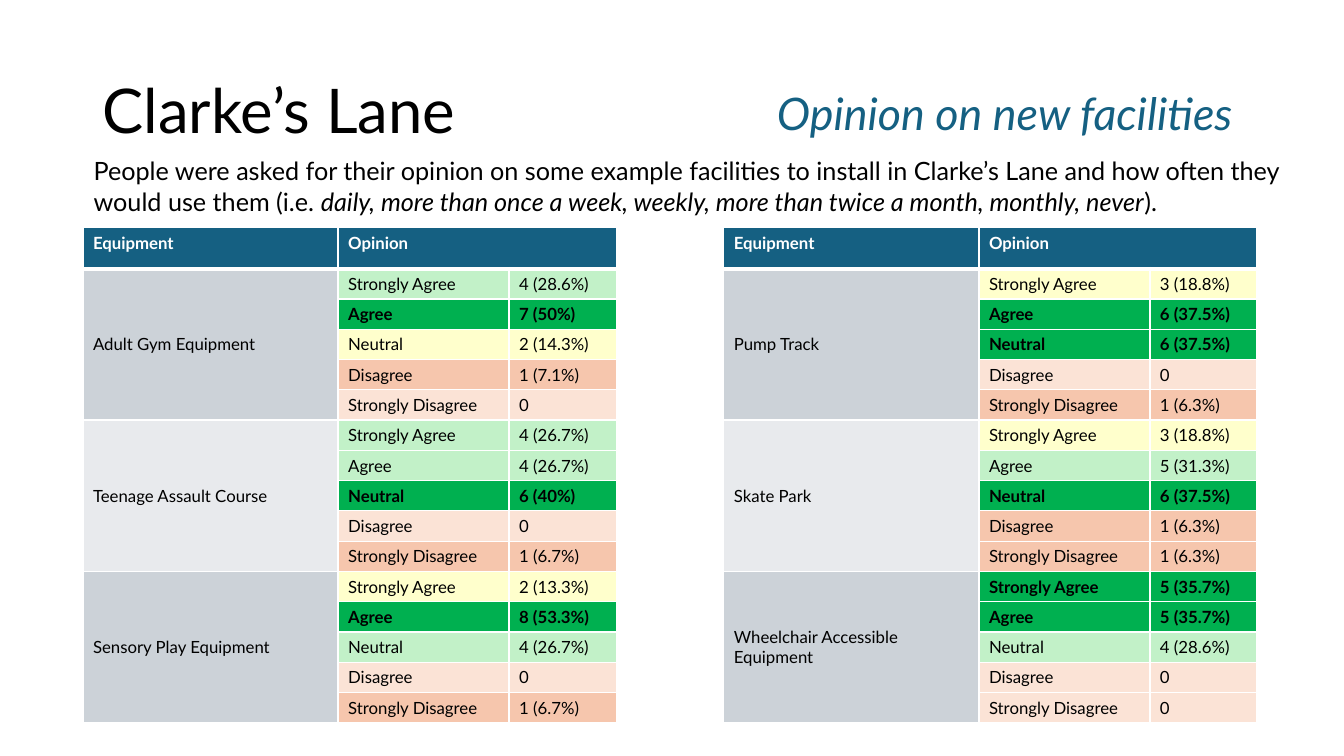
from dataclasses import dataclass
from math import floor

from lxml.etree import SubElement
from pptx import Presentation
from pptx.dml.color import RGBColor
from pptx.enum.text import MSO_ANCHOR
from pptx.oxml.ns import qn
from pptx.util import Cm, Pt


@dataclass(frozen=True)
class Theme:
    font: str = "Lato"
    title: int = 44
    topic: int = 32
    body: int = 18
    small: int = 12
    black: str = "000000"
    white: str = "FFFFFF"
    blue: str = "156082"
    bands: tuple = ("CCD2D8", "E8EAED")
    top: str = "00B050"
    high: str = "C2F1C8"
    mid: str = "FFFFCC"
    low: str = "F6C6AD"
    none: str = "FBE3D6"


LEVELS = ("Strongly Agree", "Agree", "Neutral", "Disagree", "Strongly Disagree")
WIDTHS = (6.43, 4.31, 2.7)
HEAD, ROW = 1.04, 0.76

# Votes per facility, in the order of LEVELS
LEFT = {
    "Adult Gym Equipment": (4, 7, 2, 1, 0),
    "Teenage Assault Course": (4, 4, 6, 0, 1),
    "Sensory Play Equipment": (2, 8, 4, 0, 1),
}
RIGHT = {
    "Pump Track": (3, 6, 6, 0, 1),
    "Skate Park": (3, 5, 6, 1, 1),
    "Wheelchair Accessible Equipment": (5, 5, 4, 0, 0),
}


class Painter:
    def __init__(self, slide, theme):
        self.slide = slide
        self.theme = theme

    def style(self, run, size, color, bold=False, slant=False):
        font = run.font
        font.name, font.size = self.theme.font, Pt(size)
        font.bold, font.italic = bold, slant
        font.color.rgb = RGBColor.from_string(color)

    def text(self, box, parts, size, color, anchor=MSO_ANCHOR.TOP, space=None):
        """Place one paragraph; parts are (words, italic) pairs."""
        frame = self.slide.shapes.add_textbox(*map(Cm, box)).text_frame
        frame.word_wrap = True
        frame.vertical_anchor = anchor
        para = frame.paragraphs[0]
        para.line_spacing = space
        for words, slant in parts:
            run = para.add_run()
            run.text = words
            self.style(run, size, color, slant=slant)

    def border(self, cell, top, bottom):
        props = cell._tc.get_or_add_tcPr()
        for side, width in zip("LRTB", (1, 1, top, bottom)):
            line = SubElement(props, qn(f"a:ln{side}"), w=str(Pt(width)))
            fill = SubElement(line, qn("a:solidFill"))
            SubElement(fill, qn("a:srgbClr"), val=self.theme.white)

    def cell(self, cell, words, fill, color, bold=False):
        cell.fill.solid()
        cell.fill.fore_color.rgb = RGBColor.from_string(fill)
        cell.text_frame.text = words
        for run in cell.text_frame.paragraphs[0].runs:
            self.style(run, self.theme.small, color, bold)

    def shade(self, count, votes):
        """Choose a fill from the share of the votes."""
        share = count / sum(votes)
        if count == max(votes):
            return self.theme.top
        if share >= 0.25:
            return self.theme.high
        if share >= 0.1:
            return self.theme.mid
        return self.theme.low if count else self.theme.none

    def table(self, left, top, groups):
        look, step = self.theme, len(LEVELS)
        rows = 1 + step * len(groups)
        size = (sum(WIDTHS), HEAD + ROW * (rows - 1))
        grid = self.slide.shapes.add_table(
            rows, len(WIDTHS), Cm(left), Cm(top), *map(Cm, size)).table
        grid.horz_banding = False
        for col, width in zip(grid.columns, WIDTHS):
            col.width = Cm(width)
        for i, row in enumerate(grid.rows):
            row.height = Cm(ROW if i else HEAD)
            for cell in row.cells:
                self.border(cell, 3 if i == 1 else 1, 1 if i else 3)

        # Header
        for col, words in enumerate(("Equipment", "Opinion", "")):
            self.cell(grid.cell(0, col), words, look.blue, look.white, True)
        grid.cell(0, 1).merge(grid.cell(0, 2))

        # One block of rows per facility
        for i, (name, votes) in enumerate(groups.items()):
            first = 1 + i * step
            for j, (level, count) in enumerate(zip(LEVELS, votes)):
                share = floor(1000 * count / sum(votes) + 0.5) / 10
                value = f"{count} ({share:g}%)" if count else "0"
                fill = self.shade(count, votes)
                for col, words in ((1, level), (2, value)):
                    self.cell(grid.cell(first + j, col), words, fill,
                              look.black, fill == look.top)
            block = grid.cell(first, 0)
            block.merge(grid.cell(first + step - 1, 0))
            self.cell(block, name, look.bands[i % 2], look.black)
            block.vertical_anchor = MSO_ANCHOR.MIDDLE


def main():
    deck = Presentation()
    deck.slide_width, deck.slide_height = Cm(33.87), Cm(19.05)
    look = Theme()
    page = Painter(deck.slides.add_slide(deck.slide_layouts[6]), look)

    # Headings
    page.text((2.33, 1.01, 29.21, 3.68), [("Clarke’s Lane", False)],
              look.title, look.black, MSO_ANCHOR.MIDDLE, 0.9)
    page.text((19.33, 2.03, 13.92, 1.62), [("Opinion on new facilities", True)],
              look.topic, look.blue)

    # Introduction
    page.text((2.11, 3.8, 30.58, 1.8), [
        ("People were asked for their opinion on some example facilities to "
         "install in Clarke’s Lane and how often they would use them (i.e. ", False),
        ("daily, more than once a week, weekly, more than twice a month, "
         "monthly, never", True),
        (").", False),
    ], look.body, look.black)

    # Results
    for left, groups in ((2.09, LEFT), (18.24, RIGHT)):
        page.table(left, 5.73, groups)

    deck.save("out.pptx")


if __name__ == "__main__":
    main()
